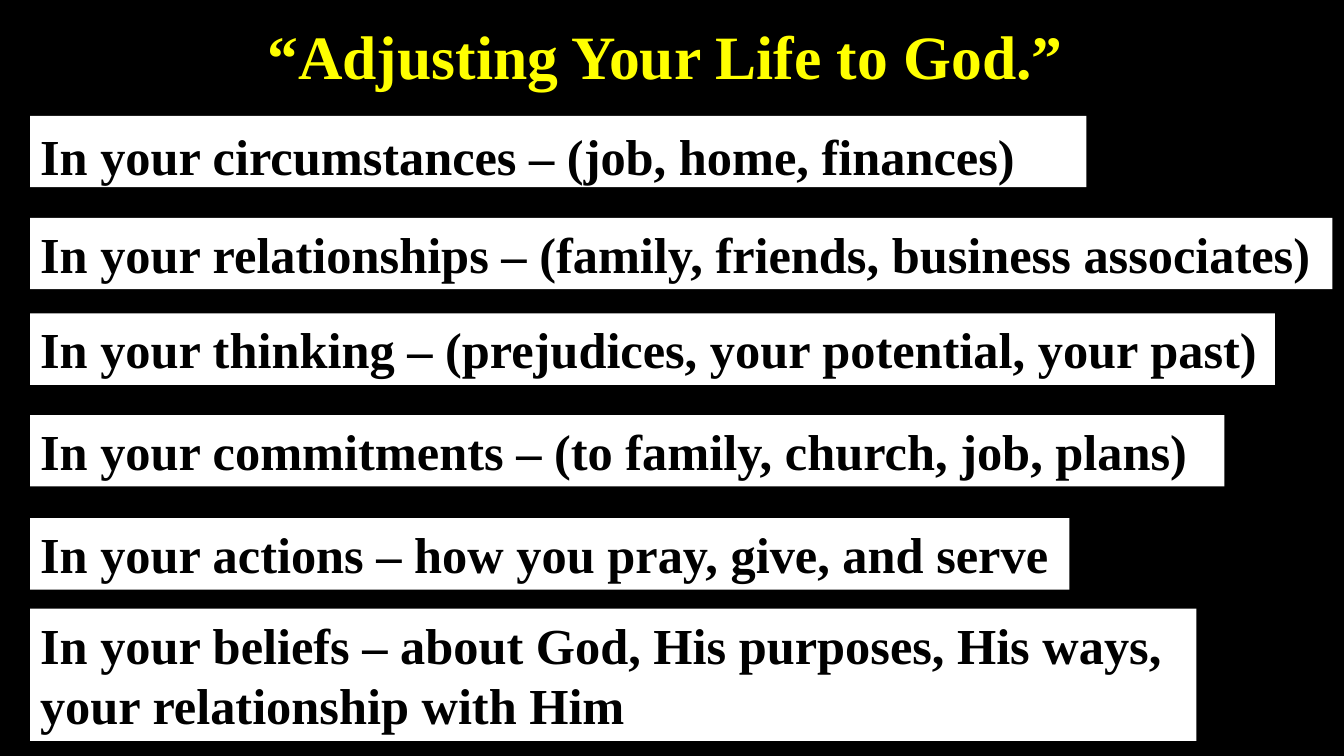
from dataclasses import dataclass

from pptx import Presentation
from pptx import util as u
from pptx.dml.color import RGBColor
from pptx.enum import shapes, text


@dataclass(frozen=True)
class Theme:
    font: str = "Times New Roman"
    background: RGBColor = RGBColor(0, 0, 0)
    title: RGBColor = RGBColor(255, 255, 0)
    bar: RGBColor = RGBColor(255, 255, 255)
    body: RGBColor = RGBColor(0, 0, 0)
    title_size: int = 44
    body_size: int = 36


THEME = Theme()
BAR_LEFT = 0.76
LINE_HEIGHT = 1.53  # added by each further line of text

# Top and width in cm, line spacing, lines of text
BARS = [
    (2.92, 26.62, 1.07, ["In your circumstances – (job, home, finances)"]),
    (5.49, 32.82, 1.0, ["In your relationships – (family, friends, business associates)"]),
    (7.9, 31.37, 1.0, ["In your thinking – (prejudices, your potential, your past)"]),
    (10.46, 30.1, 1.0, ["In your commitments – (to family, church, job, plans)"]),
    (13.06, 26.19, 1.0, ["In your actions – how you pray, give, and serve"]),
    (15.34, 29.39, 1.0, ["In your beliefs – about God, His purposes, His ways,",
                         "your relationship with Him"]),
]


def write_lines(shape, lines, size, color, alignment, spacing):
    """Fill a shape with one bold paragraph per line."""
    frame = shape.text_frame
    frame.word_wrap = True
    frame.auto_size = text.MSO_AUTO_SIZE.NONE
    frame.vertical_anchor = text.MSO_ANCHOR.TOP
    for index, line in enumerate(lines):
        paragraph = frame.add_paragraph() if index else frame.paragraphs[0]
        paragraph.alignment = alignment
        paragraph.line_spacing = spacing
        run = paragraph.add_run()
        run.text = line
        run.font.name = THEME.font
        run.font.size = u.Pt(size)
        run.font.bold = True
        run.font.color.rgb = color


def set_title(slide, title):
    shape = slide.shapes.title
    shape.left, shape.top = u.Cm(6.4), u.Cm(0.53)
    shape.width, shape.height = u.Cm(20.75), u.Cm(1.96)
    write_lines(shape, [title], THEME.title_size, THEME.title,
                text.PP_ALIGN.CENTER, 0.9)


def add_bar(slide, top, width, spacing, lines):
    height = 1.8 + LINE_HEIGHT * (len(lines) - 1)
    shape = slide.shapes.add_shape(
        shapes.MSO_SHAPE.RECTANGLE,
        u.Cm(BAR_LEFT), u.Cm(top), u.Cm(width), u.Cm(height))
    shape.shadow.inherit = False
    shape.fill.solid()
    shape.fill.fore_color.rgb = THEME.bar
    shape.line.fill.background()
    write_lines(shape, lines, THEME.body_size, THEME.body,
                text.PP_ALIGN.LEFT, spacing)


def main():
    presentation = Presentation()
    presentation.slide_width = u.Cm(33.87)
    presentation.slide_height = u.Cm(19.05)
    slide = presentation.slides.add_slide(
        presentation.slide_layouts.get_by_name("Title Only"))

    # Background
    slide.background.fill.solid()
    slide.background.fill.fore_color.rgb = THEME.background

    # Title and statement bars
    set_title(slide, "“Adjusting Your Life to God.”")
    for bar in BARS:
        add_bar(slide, *bar)

    presentation.save("out.pptx")


if __name__ == "__main__":
    main()
